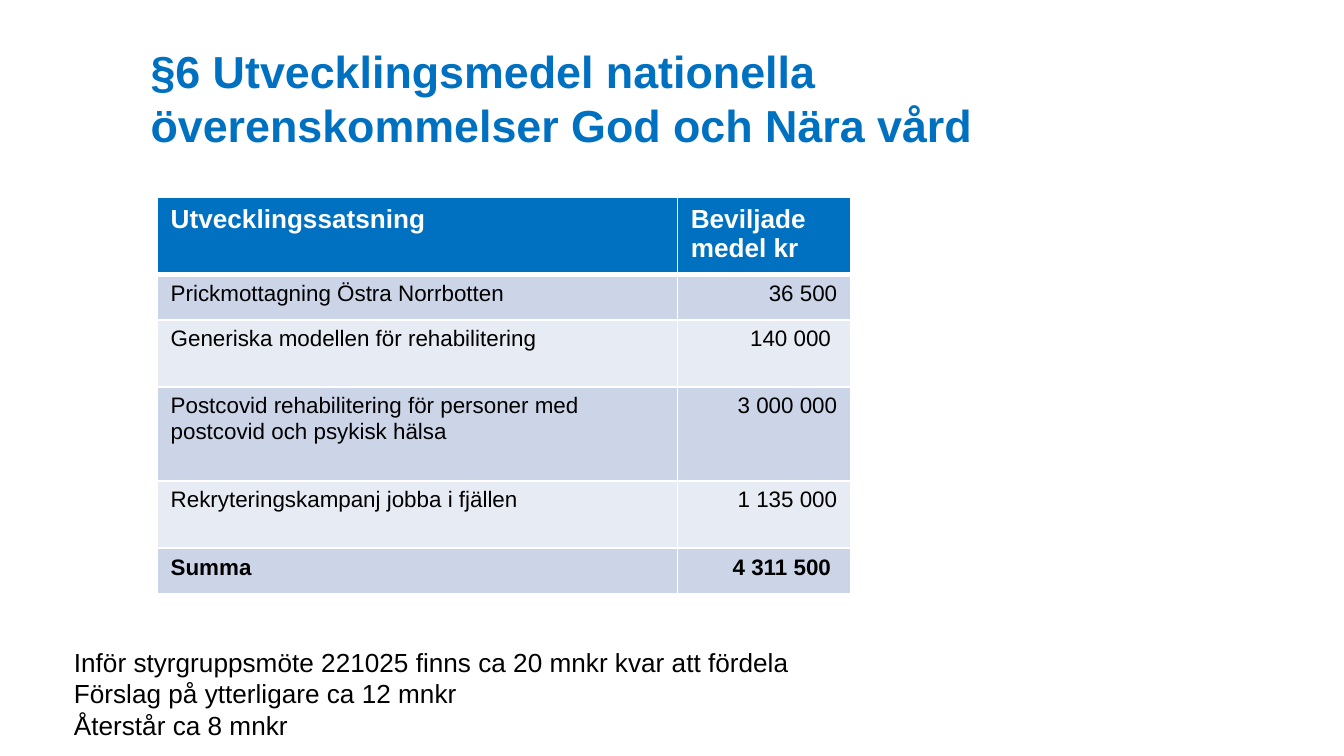
from dataclasses import dataclass

from lxml.etree import SubElement
from pptx import Presentation
from pptx.dml.color import RGBColor as Color
from pptx.enum.text import MSO_ANCHOR as Anchor, MSO_AUTO_SIZE as AutoSize, PP_ALIGN as Align
from pptx.oxml.ns import qn
from pptx.util import Inches, Pt

WIDTH = 10
HEIGHT = WIDTH * 9 / 16


@dataclass(frozen=True)
class Theme:
    font: str = "Arial"
    blue: str = "0070C0"
    white: str = "FFFFFF"
    black: str = "000000"
    bands: tuple = ("CCD5E8", "E7EBF4")
    title: int = 24
    heading: int = 14
    body: int = 12


THEME = Theme()

HEADER = ("Utvecklingssatsning", "Beviljade medel kr")
GRANTS = [
    ("Prickmottagning Östra Norrbotten", "36 500"),
    ("Generiska modellen för rehabilitering", "140 000 "),
    ("Postcovid rehabilitering för personer med postcovid och psykisk hälsa", "3 000 000"),
    ("Rekryteringskampanj jobba i fjällen", "1 135 000"),
    ("Summa", "4 311 500 "),
]
NOTES = [
    "Inför styrgruppsmöte 221025 finns ca 20 mnkr kvar att fördela",
    "Förslag på ytterligare ca 12 mnkr",
    "Återstår ca 8 mnkr",
]
COLUMN_WEIGHTS = (3, 1)
ROW_WEIGHTS = (57, 34, 50, 70, 50, 34)


def area(left, top, width, height):
    """Turn percentages of the slide into lengths."""
    return (Inches(left * WIDTH / 100), Inches(top * HEIGHT / 100),
            Inches(width * WIDTH / 100), Inches(height * HEIGHT / 100))


def share_out(total, weights):
    return [int(total * weight / sum(weights)) for weight in weights]


def style(para, size, color, bold=False, align=Align.LEFT):
    para.alignment = align
    for span in para.runs:
        span.font.name = THEME.font
        span.font.size = Pt(size)
        span.font.bold = bold
        span.font.color.rgb = Color.from_string(color)


def fill_frame(frame, text, size, color, bold=False):
    frame.text = text
    frame.word_wrap = True
    frame.auto_size = AutoSize.SHAPE_TO_FIT_TEXT
    frame.vertical_anchor = Anchor.TOP
    for para in frame.paragraphs:
        para.line_spacing = 1.0
        style(para, size, color, bold)


def set_borders(cell, bottom):
    properties = cell._tc.get_or_add_tcPr()
    for index, (side, width) in enumerate(zip("LRTB", (1, 1, 1, bottom))):
        line = properties.makeelement(qn(f"a:ln{side}"), {"w": str(Pt(width))})
        solid = SubElement(line, qn("a:solidFill"))
        SubElement(solid, qn("a:srgbClr"), val=THEME.white)
        properties.insert(index, line)


def add_title(page, box):
    title = page.shapes.title
    title.left, title.top, title.width, title.height = box
    fill_frame(title.text_frame,
               "§6 Utvecklingsmedel nationella överenskommelser God och Nära vård",
               THEME.title, THEME.blue, bold=True)


def add_grants(page, box):
    rows = [HEADER, *GRANTS]
    table = page.shapes.add_table(len(rows), len(HEADER), *box).table
    for column, width in zip(table.columns, share_out(box[2], COLUMN_WEIGHTS)):
        column.width = width
    for row, height in zip(table.rows, share_out(box[3], ROW_WEIGHTS)):
        row.height = height

    for row_index, values in enumerate(rows):
        is_header = row_index == 0
        is_total = row_index == len(rows) - 1
        background = THEME.blue if is_header else THEME.bands[(row_index - 1) % 2]
        size = THEME.heading if is_header else THEME.body
        color = THEME.white if is_header else THEME.black
        for column_index, value in enumerate(values):
            cell = table.cell(row_index, column_index)
            cell.text = value
            cell.fill.solid()
            cell.fill.fore_color.rgb = Color.from_string(background)
            is_amount = column_index == 1 and not is_header
            style(cell.text_frame.paragraphs[0], size, color, is_header or is_total,
                  Align.RIGHT if is_amount else Align.LEFT)
            set_borders(cell, bottom=3 if is_header else 1)


def add_notes(page, box):
    notes = page.shapes.add_textbox(*box)
    fill_frame(notes.text_frame, "\n".join(NOTES), THEME.heading, THEME.black)


def main():
    deck = Presentation()
    deck.slide_width, deck.slide_height = Inches(WIDTH), Inches(HEIGHT)
    title_only = deck.slide_layouts[5]
    page = deck.slides.add_slide(title_only)

    # Heading, table of grants, closing remarks
    add_title(page, area(10.2, 4.95, 79.5, 16.2))
    add_grants(page, area(11.7, 26.15, 51.6, 52.4))
    add_notes(page, area(4.52, 84.6, 70.4, 14.4))

    deck.save("out.pptx")


if __name__ == "__main__":
    main()
